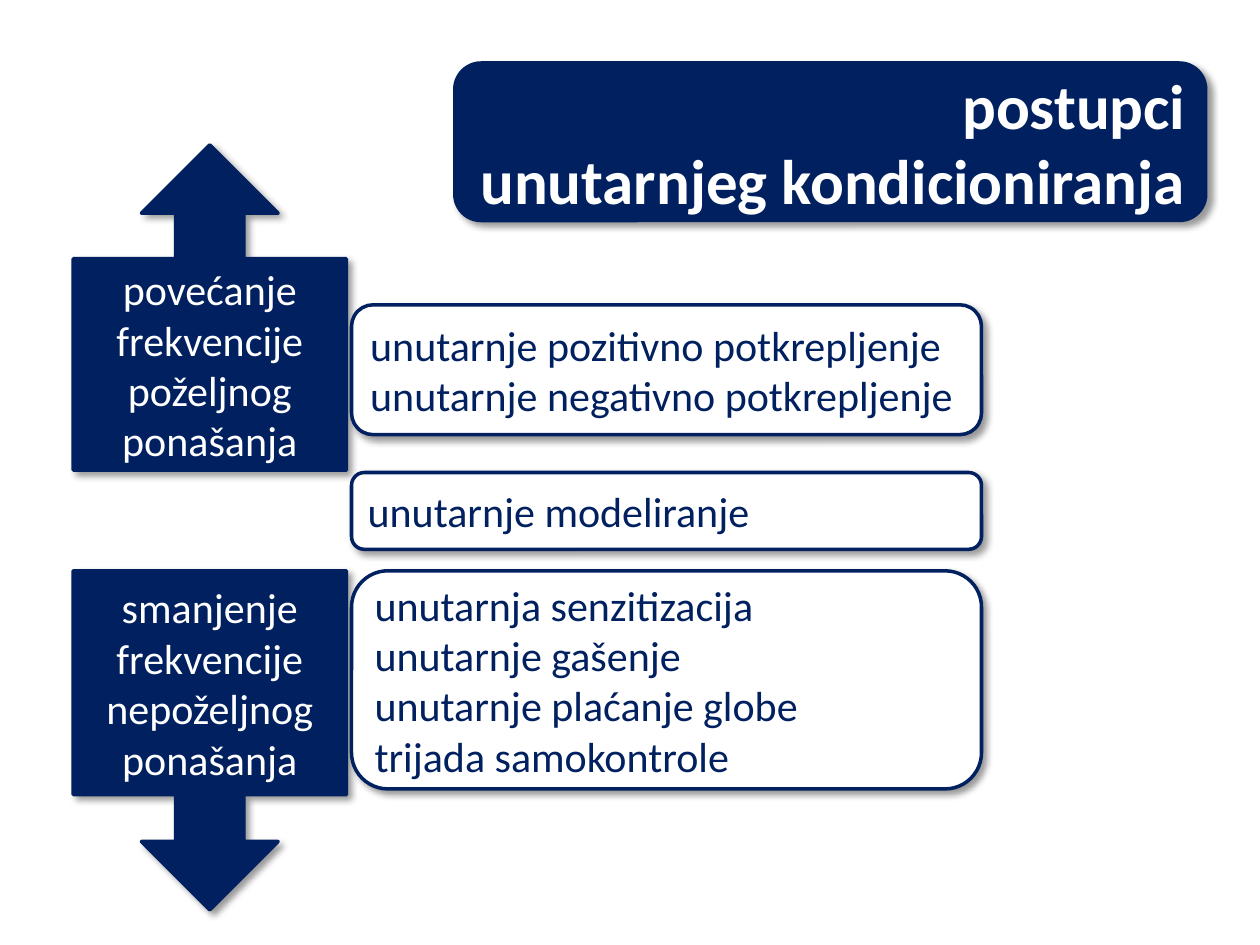
from lxml import etree
from pptx import Presentation
from pptx.dml.color import RGBColor
from pptx.enum.shapes import MSO_SHAPE
from pptx.enum.text import MSO_ANCHOR, PP_ALIGN
from pptx.oxml.ns import qn
from pptx.util import Pt

NAVY = RGBColor(0x00, 0x20, 0x60)
WHITE = RGBColor(0xFF, 0xFF, 0xFF)
ROUNDED = MSO_SHAPE.ROUNDED_RECTANGLE
UP_CALLOUT = MSO_SHAPE.UP_ARROW_CALLOUT
DOWN_CALLOUT = MSO_SHAPE.DOWN_ARROW_CALLOUT
MIDDLE = MSO_ANCHOR.MIDDLE
LEFT, CENTER, RIGHT = PP_ALIGN.LEFT, PP_ALIGN.CENTER, PP_ALIGN.RIGHT

CALLOUT_LEFT, CALLOUT_WIDTH = 41.8, 156.2
LIST_LEFT, LIST_WIDTH = 200.9, 360
DECREASE_TOP = 326.2


def add_shadow(shape):
    shape.shadow.inherit = False
    effects = shape.element.spPr.find(qn("a:effectLst"))
    shadow = etree.SubElement(
        effects, qn("a:outerShdw"), blurRad=str(Pt(4)), dist=str(Pt(3)),
        dir="2700000", algn="tl", rotWithShape="0")
    color = etree.SubElement(shadow, qn("a:srgbClr"), val="000000")
    etree.SubElement(color, qn("a:alpha"), val="40000")


def add_box(slide, kind, box, text, fill, text_color, alignment, size=24, bold=False):
    shape = slide.shapes.add_shape(kind, *map(Pt, box))
    shape.fill.solid()
    shape.fill.fore_color.rgb = fill
    shape.line.color.rgb = NAVY
    shape.line.width = Pt(2)
    add_shadow(shape)
    text_frame = shape.text_frame
    text_frame.text = text
    text_frame.word_wrap = True
    text_frame.vertical_anchor = MIDDLE
    for paragraph in text_frame.paragraphs:
        paragraph.alignment = alignment
        font = paragraph.runs[0].font
        font.name = "Calibri"
        font.size = Pt(size)
        font.bold = bold
        font.color.rgb = text_color
    return shape


def add_callout(slide, kind, top, height, text):
    box = (CALLOUT_LEFT, top, CALLOUT_WIDTH, height)
    return add_box(slide, kind, box, text, NAVY, WHITE, CENTER)


def add_procedures(slide, top, height, *procedures):
    box = (LIST_LEFT, top, LIST_WIDTH, height)
    add_box(slide, ROUNDED, box, "\n".join(procedures), WHITE, NAVY, LEFT)


def main():
    presentation = Presentation()
    presentation.slide_width = Pt(720)
    presentation.slide_height = Pt(540)
    slide = presentation.slides.add_slide(presentation.slide_layouts[6])

    add_callout(slide, UP_CALLOUT, 82.8, 185.8,
                "povećanje frekvencije poželjnog ponašanja")
    decrease = add_callout(slide, DOWN_CALLOUT, DECREASE_TOP, 193.7,
                           "smanjenje frekvencije nepoželjnog ponašanja")
    decrease.adjustments[3] = 0.66
    add_box(slide, ROUNDED, (259.9, 36, 429.1, 90),
            "postupci\nunutarnjeg kondicioniranja",
            NAVY, WHITE, RIGHT, size=36, bold=True)
    add_procedures(slide, 174.2, 74.2,
                   "unutarnje pozitivno potkrepljenje",
                   "unutarnje negativno potkrepljenje")
    add_procedures(slide, DECREASE_TOP, 124.6,
                   "unutarnja senzitizacija",
                   "unutarnje gašenje",
                   "unutarnje plaćanje globe",
                   "trijada samokontrole")
    add_procedures(slide, 270, 43.9, "unutarnje modeliranje")

    presentation.save("out.pptx")


if __name__ == "__main__":
    main()
